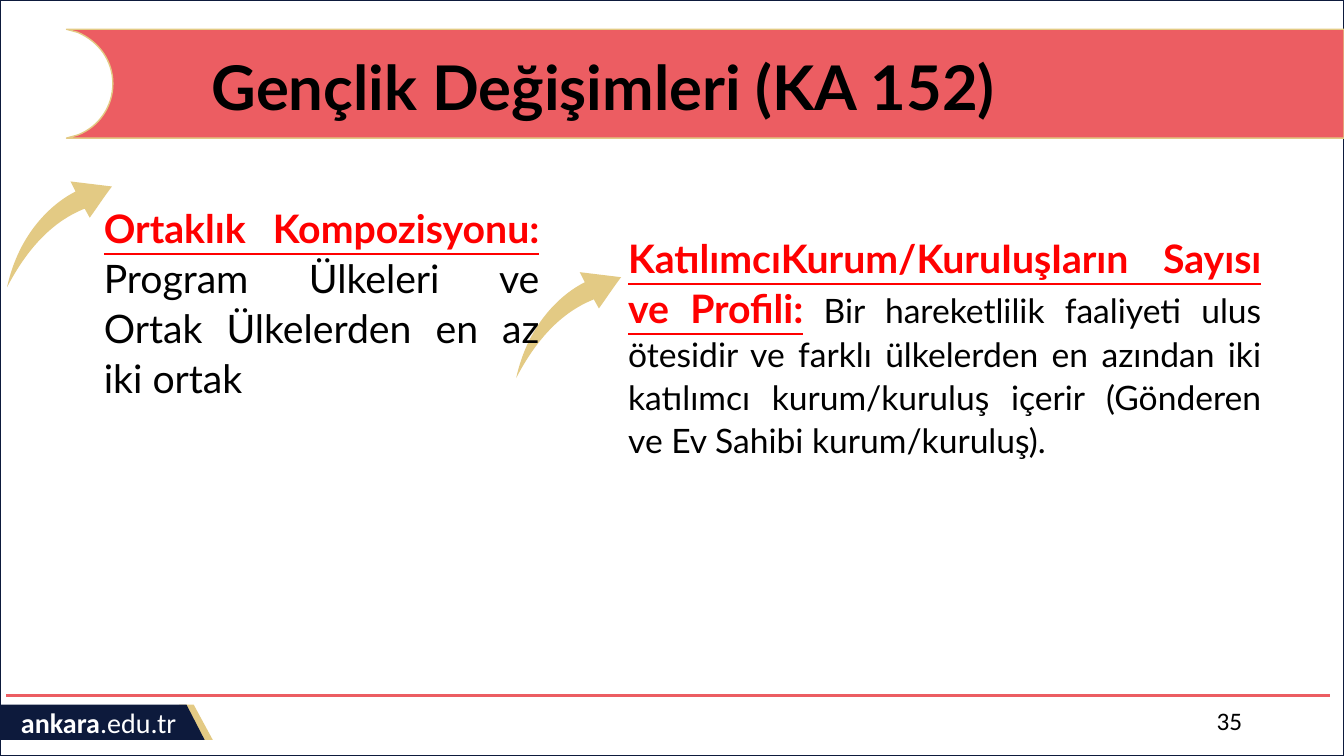
from dataclasses import dataclass

import pptx
import pptx.dml.color
import pptx.enum.shapes
import pptx.enum.text
import pptx.oxml
import pptx.oxml.ns
import pptx.util
from pptx.util import Inches

RGBColor = pptx.dml.color.RGBColor
PP_ALIGN = pptx.enum.text.PP_ALIGN
ANCHOR = pptx.enum.text.MSO_ANCHOR
SHAPE = pptx.enum.shapes.MSO_SHAPE

NAVY = RGBColor(0x0D, 0x1A, 0x3C)
GOLD = RGBColor(0xE3, 0xCA, 0x84)
CORAL = RGBColor(0xEC, 0x5D, 0x62)
RED = RGBColor(0xFF, 0x00, 0x00)
BLACK = RGBColor(0x00, 0x00, 0x00)
WHITE = RGBColor(0xFF, 0xFF, 0xFF)

WIDTH, HEIGHT = 13.33, 7.5

Point = tuple[float, float]
Area = tuple[float, float, float, float]


@dataclass(frozen=True)
class Curve:
    first: Point
    second: Point
    end: Point


@dataclass(frozen=True)
class Topic:
    placeholder: int
    area: Area
    right_margin: float
    heading: str
    detail: str
    detail_size: int
    arrow_shift: Point


BANNER = [
    (0.66, 0.29), (WIDTH, 0.29), (WIDTH, 1.37), (0.66, 1.37), (0.77, 1.34),
    Curve((0.98, 1.26), (1.12, 1.06), (1.12, 0.83)),
    Curve((1.12, 0.6), (0.98, 0.41), (0.77, 0.32)),
]
ARROW = [
    (0.89, 2.16),
    Curve((0.97, 2.05), (1.02, 1.97), (1.11, 1.85)),
    (0.7, 1.8), (0.75, 1.9),
    Curve((0.53, 2.01), (0.19, 2.3), (0.07, 2.85)),
    Curve((0.34, 2.33), (0.64, 2.15), (0.84, 2.07)),
]
ADDRESS_PLATE = [(0, 6.99), (1.85, 6.99), (2.03, 7.34), (0, 7.34)]

TOPICS = [
    Topic(1, (0.93, 1.95, 4.52, 1.77), 0.1, "Ortaklık Kompozisyonu: ",
          "Program Ülkeleri ve Ortak Ülkelerden en az iki ortak", 28, (0, 0)),
    Topic(2, (6.13, 2.25, 6.66, 3.84), 0.28,
          "KatılımcıKurum/KuruIuşIarın Sayısı ve Profili:",
          " Bir hareketlilik faaliyeti ulus ötesidir ve farklı ülkelerden en "
          "azından iki katılımcı kurum/kuruluş içerir (Gönderen ve Ev Sahibi "
          "kurum/kuruluş).", 24, (5.05, 0.9)),
]


def style(shape, fill: RGBColor | None, line: RGBColor | None = None,
          line_width: float = 1) -> None:
    shape.shadow.inherit = False
    if fill is None:
        shape.fill.background()
    else:
        shape.fill.solid()
        shape.fill.fore_color.rgb = fill
    if line is None:
        shape.line.fill.background()
    else:
        shape.line.color.rgb = line
        shape.line.width = pptx.util.Pt(line_width)


def draw_outline(page, outline: list[Point | Curve], fill: RGBColor,
                 line: RGBColor | None = None, shift: Point = (0, 0)) -> None:
    def locate(point: Point) -> tuple[int, int]:
        return Inches(point[0] + shift[0]), Inches(point[1] + shift[1])

    nodes = [locate(part.end if isinstance(part, Curve) else part) for part in outline]
    builder = page.shapes.build_freeform(*nodes[0], scale=1.0)
    builder.add_line_segments(nodes[1:], close=True)
    shape = builder.convert_to_shape()
    style(shape, fill, line)

    segments = list(shape.element.iter(pptx.oxml.ns.qn("a:lnTo")))
    for segment, part in zip(segments, outline[1:]):
        if isinstance(part, Curve):
            controls = [locate(point) for point in (part.first, part.second, part.end)]
            marks = "".join(f'<a:pt x="{x - shape.left}" y="{y - shape.top}"/>'
                            for x, y in controls)
            segment.getparent().replace(segment, pptx.oxml.parse_xml(
                f"<a:cubicBezTo {pptx.oxml.ns.nsdecls('a')}>{marks}</a:cubicBezTo>"))


def write(para, text: str, *, font: str, size: int, color: RGBColor = BLACK,
          bold: bool = False, underline: bool = False) -> None:
    span = para.add_run()
    span.text = text
    span.font.name = font
    span.font.size = pptx.util.Pt(size)
    span.font.color.rgb = color
    span.font.bold = bold
    span.font.underline = underline


def set_up(box, anchor: ANCHOR, align: PP_ALIGN):
    frame = box.text_frame
    frame.word_wrap = True
    frame.auto_size = pptx.enum.text.MSO_AUTO_SIZE.NONE
    frame.vertical_anchor = anchor
    para = frame.paragraphs[0]
    para.alignment = align
    return para


def place(box, area: Area) -> None:
    box.left, box.top, box.width, box.height = map(Inches, area)
    box.element.getparent().append(box.element)


def add_text_box(page, area: Area, align: PP_ALIGN):
    box = page.shapes.add_textbox(*map(Inches, area))
    return set_up(box, ANCHOR.TOP, align)


def draw_frame(page) -> None:
    border = page.shapes.add_shape(SHAPE.RECTANGLE, 0, 0, Inches(WIDTH), Inches(HEIGHT))
    style(border, None, NAVY, 1.5)
    stripe = page.shapes.add_shape(
        SHAPE.TRAPEZOID, Inches(1.59), Inches(6.99), Inches(0.52), Inches(0.35))
    stripe.adjustments[0] = 0.54
    style(stripe, GOLD)
    draw_outline(page, ADDRESS_PLATE, NAVY)
    address = add_text_box(page, (0.11, 6.95, 2.13, 0.44), PP_ALIGN.LEFT)
    write(address, "ankara", font="Calibri", size=20, color=WHITE, bold=True)
    write(address, ".edu.tr", font="Calibri", size=20, color=WHITE)


def draw_footer(page) -> None:
    rule = page.shapes.add_connector(
        pptx.enum.shapes.MSO_CONNECTOR.STRAIGHT,
        Inches(0.06), Inches(6.9), Inches(13.19), Inches(6.9))
    rule.line.color.rgb = CORAL
    rule.line.width = pptx.util.Pt(2.25)
    properties = rule.element.find(pptx.oxml.ns.qn("p:spPr"))
    properties.append(pptx.oxml.parse_xml(
        f"<a:effectLst {pptx.oxml.ns.nsdecls('a')}/>"))
    number = add_text_box(page, (9.42, 6.95, 3, 0.4), PP_ALIGN.RIGHT)
    write(number, "35", font="Calibri", size=18)


def draw_title(page) -> None:
    draw_outline(page, BANNER, CORAL, GOLD)
    title = page.shapes.title
    place(title, (2, 0.29, 11, 1.08))
    para = set_up(title, ANCHOR.MIDDLE, PP_ALIGN.LEFT)
    para.line_spacing = 1.07
    write(para, "Gençlik Değişimleri (KA 152)", font="Lato", size=44, bold=True)


def write_topic(page, topic: Topic) -> None:
    body = page.placeholders[topic.placeholder]
    place(body, topic.area)
    para = set_up(body, ANCHOR.TOP, PP_ALIGN.JUSTIFY)
    body.text_frame.margin_right = Inches(topic.right_margin)
    para.line_spacing = 1.06
    para.space_before = pptx.util.Pt(0)
    layout = para._p.get_or_add_pPr()
    layout.set("marL", "0")
    layout.set("indent", "0")
    layout.append(pptx.oxml.parse_xml(f"<a:buNone {pptx.oxml.ns.nsdecls('a')}/>"))
    write(para, topic.heading, font="Lato", size=28, color=RED, bold=True, underline=True)
    write(para, topic.detail, font="Lato", size=topic.detail_size)


def main() -> None:
    deck = pptx.Presentation()
    deck.slide_width = Inches(WIDTH)
    deck.slide_height = Inches(HEIGHT)
    page = deck.slides.add_slide(deck.slide_layouts[3])
    draw_frame(page)
    draw_title(page)
    draw_footer(page)
    for topic in TOPICS:
        draw_outline(page, ARROW, GOLD, shift=topic.arrow_shift)
    for topic in TOPICS:
        write_topic(page, topic)
    deck.save("out.pptx")


if __name__ == "__main__":
    main()
